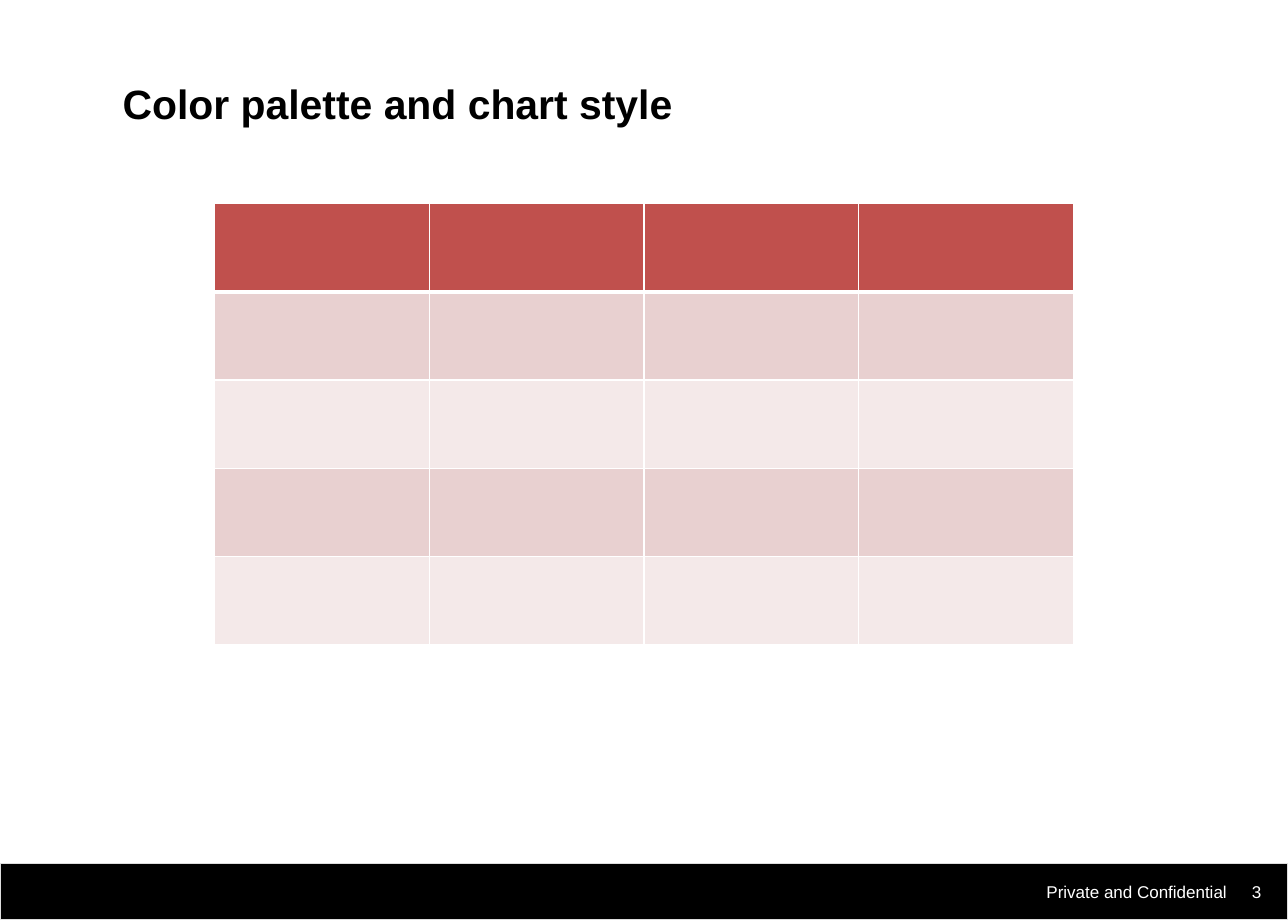
from lxml.etree import SubElement
from pptx import Presentation
from pptx.dml.color import RGBColor
from pptx.enum.shapes import MSO_SHAPE as Shape
from pptx.enum.text import MSO_ANCHOR as Anchor, PP_ALIGN as Align
from pptx.oxml.ns import qn
from pptx.util import Emu, Pt

PX = 9144
COLORS = {
    "black": "000000",
    "white": "FFFFFF",
    "outline": "DDDDDD",
    "header": "C0504D",
    "band_dark": "E8D0D0",
    "band_light": "F4E9E9",
}


class SlideBuilder:
    """Draws styled elements on one slide, with lengths in px of 1/100 inch."""

    font_name = "Arial"

    def __init__(self, deck):
        self.page = deck.slides.add_slide(deck.slide_layouts[6])

    def color(self, name):
        return RGBColor.from_string(COLORS[name])

    def lengths(self, *values):
        return [Emu(value * PX) for value in values]

    def bar(self, place, fill, line):
        shape = self.page.shapes.add_shape(Shape.RECTANGLE, *self.lengths(*place))
        shape.shadow.inherit = False
        shape.fill.solid()
        shape.fill.fore_color.rgb = self.color(fill)
        shape.line.color.rgb = self.color(line)
        shape.line.width = Pt(0.75)

    def text(self, place, words, size, color, align=Align.LEFT,
             anchor=Anchor.TOP, bold=False, inset=0):
        box = self.page.shapes.add_textbox(*self.lengths(*place))
        frame = box.text_frame
        frame.word_wrap = True
        frame.vertical_anchor = anchor
        frame.margin_left = frame.margin_right = 0
        frame.margin_top = frame.margin_bottom = Emu(inset * PX)
        frame.text = words
        para = frame.paragraphs[0]
        para.alignment = align
        for span in para.runs:
            span.font.name = self.font_name
            span.font.size = Pt(size)
            span.font.bold = bold
            span.font.color.rgb = self.color(color)

    def border(self, cell, side, width):
        properties = cell._tc.get_or_add_tcPr()
        line = SubElement(properties, qn(f"a:ln{side}"), w=str(Pt(width)))
        fill = SubElement(line, qn("a:solidFill"))
        SubElement(fill, qn("a:srgbClr"), val=COLORS["white"])

    def table(self, place, columns, row_fills):
        frame = self.page.shapes.add_table(
            len(row_fills), columns, *self.lengths(*place))
        for number, (row, fill) in enumerate(zip(frame.table.rows, row_fills)):
            widths = {"L": 1, "R": 1,
                      "T": 3 if number == 1 else 1,
                      "B": 3 if number == 0 else 1}
            for cell in row.cells:
                for side, width in widths.items():
                    self.border(cell, side, width)
                cell.fill.solid()
                cell.fill.fore_color.rgb = self.color(fill)


def main():
    deck = Presentation()
    deck.slide_width, deck.slide_height = Emu(1050 * PX), Emu(750 * PX)
    slide = SlideBuilder(deck)
    slide.bar((0, 704, 1050, 46), "black", "outline")
    slide.text((827, 719, 173, 17), "Private and Confidential", 10, "white",
               align=Align.RIGHT)
    slide.text((1008, 719, 33, 17), "3", 10, "white", align=Align.CENTER)
    slide.text((100, 18, 950, 91), "Color palette and chart style", 24, "black",
               anchor=Anchor.BOTTOM, bold=True, inset=5)
    slide.table((175, 166, 700, 360), 4,
                ["header"] + ["band_dark", "band_light"] * 2)
    deck.save("out.pptx")


if __name__ == "__main__":
    main()
